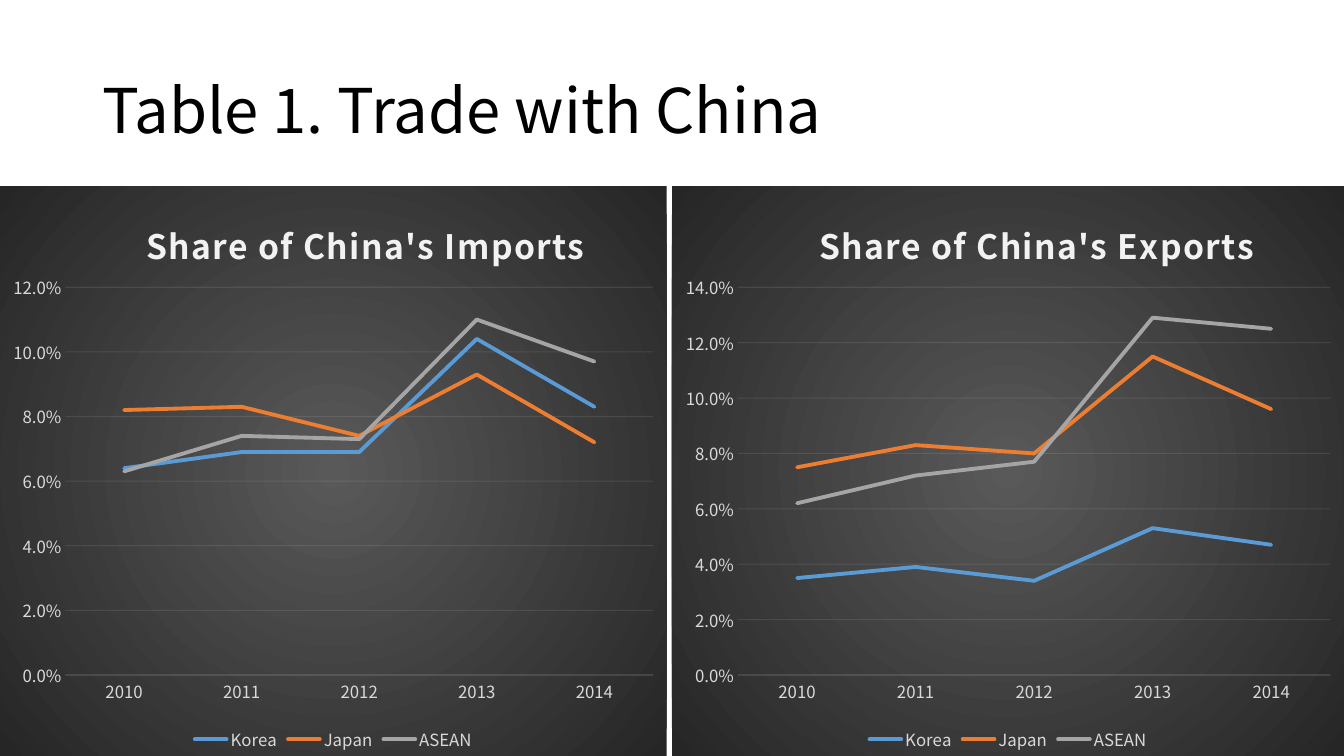
"""Builds a slide that compares shares of China's imports and exports in two line charts."""
from dataclasses import dataclass

from lxml.etree import SubElement
from pptx import Presentation
from pptx.chart.data import CategoryChartData
from pptx.dml.color import RGBColor
from pptx.enum.chart import XL_CHART_TYPE, XL_LEGEND_POSITION, XL_TICK_MARK
from pptx.enum.text import MSO_ANCHOR
from pptx.oxml import parse_xml
from pptx.oxml.ns import nsdecls, qn
from pptx.util import Inches, Pt

HEADING = "Table 1. Trade with China"
YEARS = ["2010", "2011", "2012", "2013", "2014"]
PANELS = [
    {"title": "Share of China's Imports", "left": 0, "width": 0.496, "top_value": 0.12,
     "shares": {"Korea": (0.064, 0.069, 0.069, 0.104, 0.083),
                "Japan": (0.082, 0.083, 0.074, 0.093, 0.072),
                "ASEAN": (0.063, 0.074, 0.073, 0.11, 0.097)}},
    {"title": "Share of China's Exports", "left": 0.5, "width": 0.5, "top_value": 0.14,
     "shares": {"Korea": (0.035, 0.039, 0.034, 0.053, 0.047),
                "Japan": (0.075, 0.083, 0.08, 0.115, 0.096),
                "ASEAN": (0.062, 0.072, 0.077, 0.129, 0.125)}},
]
PANEL_TOP = 1.85 / 7.5
PLOT_AREA = {"x": 0.098, "y": 0.177, "w": 0.882, "h": 0.681}
TITLE_PLACE = {"x": 0.21, "y": 0.042}


@dataclass(frozen=True)
class Theme:
    """Colours, font and type sizes."""
    font: str = "Noto Sans CJK KR"
    heading: str = "000000"
    chart_title: str = "F2F2F2"
    label: str = "D9D9D9"
    grid: str = "F2F2F2"
    glow: str = "595959"
    shade: str = "262626"
    series: tuple = ("5B9BD5", "ED7D31", "A5A5A5")
    heading_size: int = 44
    title_size: int = 24
    label_size: int = 12


THEME = Theme()


def apply(target, formats):
    for name, value in formats.items():
        setattr(target, name, value)


def style_font(font, size, color, bold=False):
    apply(font, {"name": THEME.font, "size": Pt(size), "bold": bold})
    font.color.rgb = RGBColor.from_string(color)


def style_line(line, width, color):
    line.width = Pt(width)
    line.color.rgb = RGBColor.from_string(color)


def style_faint_line(line):
    style_line(line, 0.75, THEME.grid)
    color = next(line.fill._xPr.iter(qn("a:srgbClr")))
    SubElement(color, qn("a:alpha"), val="10000")


def place(parent, shares, inner=False):
    """Gives a chart part a fixed place, as shares of the chart."""
    for old in parent.findall(qn("c:layout")):
        parent.remove(old)
    layout = parse_xml(f"<c:layout {nsdecls('c')}><c:manualLayout/></c:layout>")
    manual = layout[0]
    if inner:
        SubElement(manual, qn("c:layoutTarget"), val="inner")
    for axis in "xy":
        SubElement(manual, qn(f"c:{axis}Mode"), val="edge")
    for name, share in shares.items():
        SubElement(manual, qn(f"c:{name}"), val=str(share))
    text = parent.find(qn("c:tx"))
    if text is None:
        parent.insert(0, layout)
    else:
        text.addnext(layout)


def fill_background(chart):
    stops = "".join(f'<a:gs pos="{pos}"><a:srgbClr val="{color}"/></a:gs>'
                    for pos, color in ((0, THEME.glow), (100000, THEME.shade)))
    background = parse_xml(
        f'<c:spPr {nsdecls("c", "a")}><a:gradFill><a:gsLst>{stops}</a:gsLst>'
        '<a:path path="circle"><a:fillToRect l="50000" t="50000" r="50000" b="50000"/></a:path>'
        '</a:gradFill><a:ln><a:noFill/></a:ln></c:spPr>')
    chart._chartSpace.find(qn("c:txPr")).addprevious(background)


def add_heading(page):
    box = page.shapes.add_textbox(Inches(0.92), Inches(0.4), Inches(11.5), Inches(1.45))
    apply(box.text_frame, {"word_wrap": True, "vertical_anchor": MSO_ANCHOR.MIDDLE})
    para = box.text_frame.paragraphs[0]
    para.line_spacing = 0.9
    span = para.add_run()
    span.text = HEADING
    style_font(span.font, THEME.heading_size, THEME.heading)


def add_panel(deck, page, panel):
    data = CategoryChartData(number_format="0.0%")
    data.categories = YEARS
    for country, shares in panel["shares"].items():
        data.add_series(country, shares)
    width, height = deck.slide_width, deck.slide_height
    chart = page.shapes.add_chart(
        XL_CHART_TYPE.LINE, int(width * panel["left"]), int(height * PANEL_TOP),
        int(width * panel["width"]), int(height * (1 - PANEL_TOP)), data).chart
    style_font(chart.font, THEME.label_size, THEME.label)
    fill_background(chart)

    chart.has_title = True
    span = chart.chart_title.text_frame.paragraphs[0].add_run()
    span.text = panel["title"]
    style_font(span.font, THEME.title_size, THEME.chart_title, bold=True)
    span.font._element.set("spc", "100")
    place(chart.chart_title._element, TITLE_PLACE)
    place(chart._chartSpace.chart.plotArea, PLOT_AREA, inner=True)

    chart.has_legend = True
    apply(chart.legend, {"position": XL_LEGEND_POSITION.BOTTOM, "include_in_layout": False})
    style_font(chart.legend.font, THEME.label_size, THEME.label)

    for axis in (chart.category_axis, chart.value_axis):
        apply(axis, {"major_tick_mark": XL_TICK_MARK.NONE, "minor_tick_mark": XL_TICK_MARK.NONE})
        style_font(axis.tick_labels.font, THEME.label_size, THEME.label)
    style_faint_line(chart.category_axis.format.line)
    apply(chart.value_axis, {"minimum_scale": 0, "maximum_scale": panel["top_value"],
                             "major_unit": 0.02, "has_major_gridlines": True})
    apply(chart.value_axis.tick_labels, {"number_format": "0.0%", "number_format_is_linked": False})
    chart.value_axis.format.line.fill.background()
    style_faint_line(chart.value_axis.major_gridlines.format.line)

    chart.plots[0].vary_by_categories = False
    for series, color in zip(chart.plots[0].series, THEME.series):
        series.smooth = False
        style_line(series.format.line, 2.75, color)
        series.format.line.fill._xPr.set("cap", "rnd")


def main():
    deck = Presentation()
    apply(deck, {"slide_width": Inches(13.33), "slide_height": Inches(7.5)})
    page = deck.slides.add_slide(deck.slide_layouts[6])
    add_heading(page)
    for panel in PANELS:
        add_panel(deck, page, panel)
    deck.save("out.pptx")


if __name__ == "__main__":
    main()
